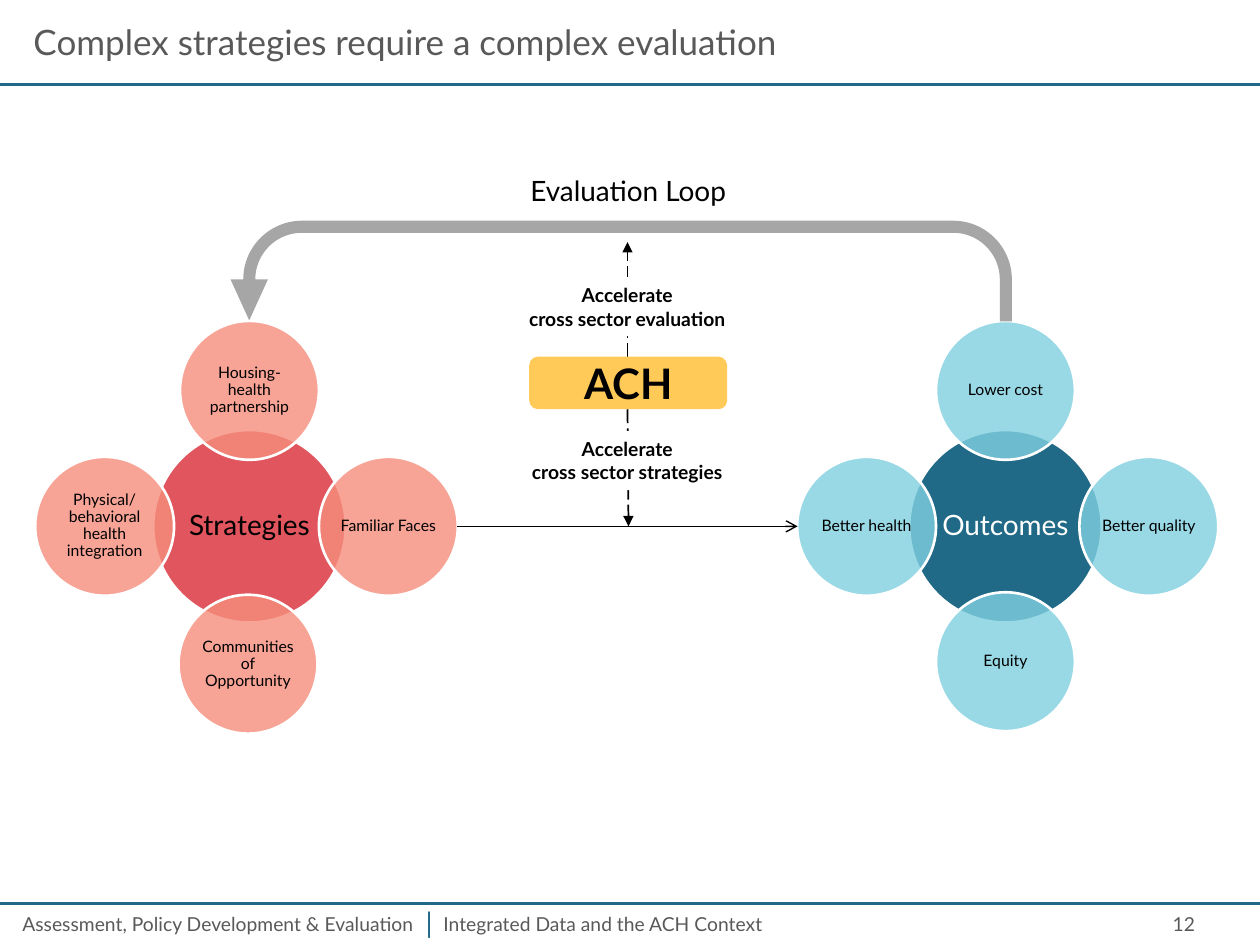
"""Build the slide on strategies, outcomes and the evaluation loop."""
import pptx
import pptx.util
import pptx.dml.color
import pptx.enum.dml
import pptx.enum.shapes
import pptx.enum.text
import pptx.oxml.ns
from lxml import etree

Cm, Pt = pptx.util.Cm, pptx.util.Pt
RGB = pptx.dml.color.RGBColor.from_string
Align = pptx.enum.text.PP_ALIGN
Anchor = pptx.enum.text.MSO_ANCHOR
Kind = pptx.enum.shapes.MSO_SHAPE
Dash = pptx.enum.dml.MSO_LINE
qn = pptx.oxml.ns.qn


class Theme:
    font = "Lato"
    ink, gray, white = "000000", "595959", "FFFFFF"
    teal, aqua = "206A87", "80D0E0"
    red, coral = "E1555E", "F58E7C"
    gold, loop = "FFCA58", "A6A6A6"
    title, hub, petal, label, ach = 20, 16, 9, 11, 24


def write(shape, text, size, color, align=Align.CENTER, bold=False, inset=None, space=None,
          anchor=Anchor.MIDDLE):
    frame = shape.text_frame
    frame.text = text
    form = {"word_wrap": True, "vertical_anchor": anchor}
    if inset is not None:
        form.update({f"margin_{side}": Cm(inset) for side in ("left", "top", "right", "bottom")})
    for name, value in form.items():
        setattr(frame, name, value)
    for para in frame.paragraphs:
        para.alignment = align
        para.line_spacing = space
        for run in para.runs:
            for name, value in {"name": Theme.font, "size": Pt(size), "bold": bold}.items():
                setattr(run.font, name, value)
            run.font.color.rgb = RGB(color)


def draw(kind, box, fill, edge=None, alpha=None):
    shape = slide.shapes.add_shape(kind, *map(Cm, box))
    shape.shadow.inherit = False
    shape.fill.solid()
    shape.fill.fore_color.rgb = RGB(fill)
    if alpha:
        tone = shape.fill._xPr.find(qn("a:solidFill"))[0]
        etree.SubElement(tone, qn("a:alpha"), val=str(alpha * 1000))
    if edge:
        shape.line.color.rgb = RGB(edge)
        shape.line.width = Pt(1.5)
    else:
        shape.line.fill.background()
    return shape


deck = pptx.Presentation()
deck.slide_width, deck.slide_height = Cm(25.4), Cm(19.05)
slide = deck.slides.add_slide(deck.slide_layouts[5])

title = slide.shapes.title
place = {"left": 0.42, "top": 0.42, "width": 24.56, "height": 0.85}
for name, value in place.items():
    setattr(title, name, Cm(value))
write(title, "Complex strategies require a complex evaluation", Theme.title, Theme.gray, Align.LEFT)

flowers = [
    ("Strategies", 5.03, Theme.red, Theme.coral, Theme.ink, [
        ("Housing-health partnership", 0, -2.74),
        ("Familiar Faces", 2.8, 0),
        ("Communities of Opportunity", -0.03, 2.78),
        ("Physical/ behavioral health integration", -2.92, 0)]),
    ("Outcomes", 20.27, Theme.teal, Theme.aqua, Theme.white, [
        ("Lower cost", 0, -2.74),
        ("Better quality", 2.89, 0),
        ("Equity", 0, 2.73),
        ("Better health", -2.8, 0)]),
]
mid = 10.61
for name, x, dark, light, ink, petals in flowers:
    discs = [(name, 0, 0, 3.88, dark, None, Theme.hub, ink)]
    discs += [(text, dx, dy, 2.8, light, 80, Theme.petal, Theme.ink) for text, dx, dy in petals]
    for text, dx, dy, size, fill, alpha, points, color in discs:
        box = (x + dx - size / 2, mid + dy - size / 2, size, size)
        disc = draw(Kind.OVAL, box, fill, Theme.white, alpha)
        write(disc, text, points, color, inset=0, space=0.9)

arrow = draw(Kind.U_TURN_ARROW, (4.65, 4.45, 15.75, 2.03), Theme.loop)
for spot, value in enumerate((0.12, 0.185, 0.406, 0.584, 0.99)):
    arrow.adjustments[spot] = value
arrow._element.spPr.find(qn("a:xfrm")).set("flipH", "1")

lines = [
    ((0, 18.21, 25.4, 18.21), Theme.teal, 1.5, None, None),
    ((0, 1.7, 25.4, 1.7), Theme.teal, 1.5, None, None),
    ((9.22, mid, 16.08, mid), Theme.ink, 0.79, None, "arrow"),
    ((12.65, 8.25, 12.67, mid), Theme.ink, 1, Dash.LONG_DASH, "triangle"),
    ((12.65, 7.19, 12.65, 4.88), Theme.ink, 1, Dash.LONG_DASH, "triangle"),
]
for ends, color, width, dash, tip in lines:
    line = slide.shapes.add_connector(pptx.enum.shapes.MSO_CONNECTOR.STRAIGHT, *map(Cm, ends))
    line.line.color.rgb = RGB(color)
    for name, value in {"width": Pt(width), "dash_style": dash}.items():
        setattr(line.line, name, value)
    if tip:
        etree.SubElement(line.line._ln, qn("a:tailEnd"), type=tip)
    etree.SubElement(line._element.spPr, qn("a:effectLst"))

badge = draw(Kind.ROUNDED_RECTANGLE, (10.67, 7.19, 3.99, 1.06), Theme.gold)
write(badge, "ACH", Theme.ach, Theme.ink, bold=True, inset=0)

for goal, top in (("strategies", 8.69), ("evaluation", 5.59)):
    label = draw(Kind.RECTANGLE, (10.31, top, 4.67, 1.19), Theme.white)
    write(label, f"Accelerate\ncross sector {goal}", Theme.label, Theme.ink, bold=True)

notes = [
    ("Evaluation Loop", (9.91, 3.38, 5.51, 0.94), Theme.hub, Theme.ink, Align.CENTER),
    ("Assessment, Policy Development & Evaluation", (0.2, 18.26, 9.09, 0.74),
     Theme.label, Theme.gray, Align.LEFT),
    ("Integrated Data and the ACH Context", (8.69, 18.26, 12.9, 0.74),
     Theme.label, Theme.gray, Align.LEFT),
    ("|", (8.23, 18.14, 0.84, 0.94), Theme.hub, Theme.teal, Align.CENTER),
    ("12", (18.42, 18.26, 5.92, 0.76), Theme.label, Theme.gray, Align.RIGHT),
]
for text, box, size, color, align in notes:
    note = slide.shapes.add_textbox(*map(Cm, box))
    write(note, text, size, color, align, anchor=Anchor.TOP)

deck.save("out.pptx")
